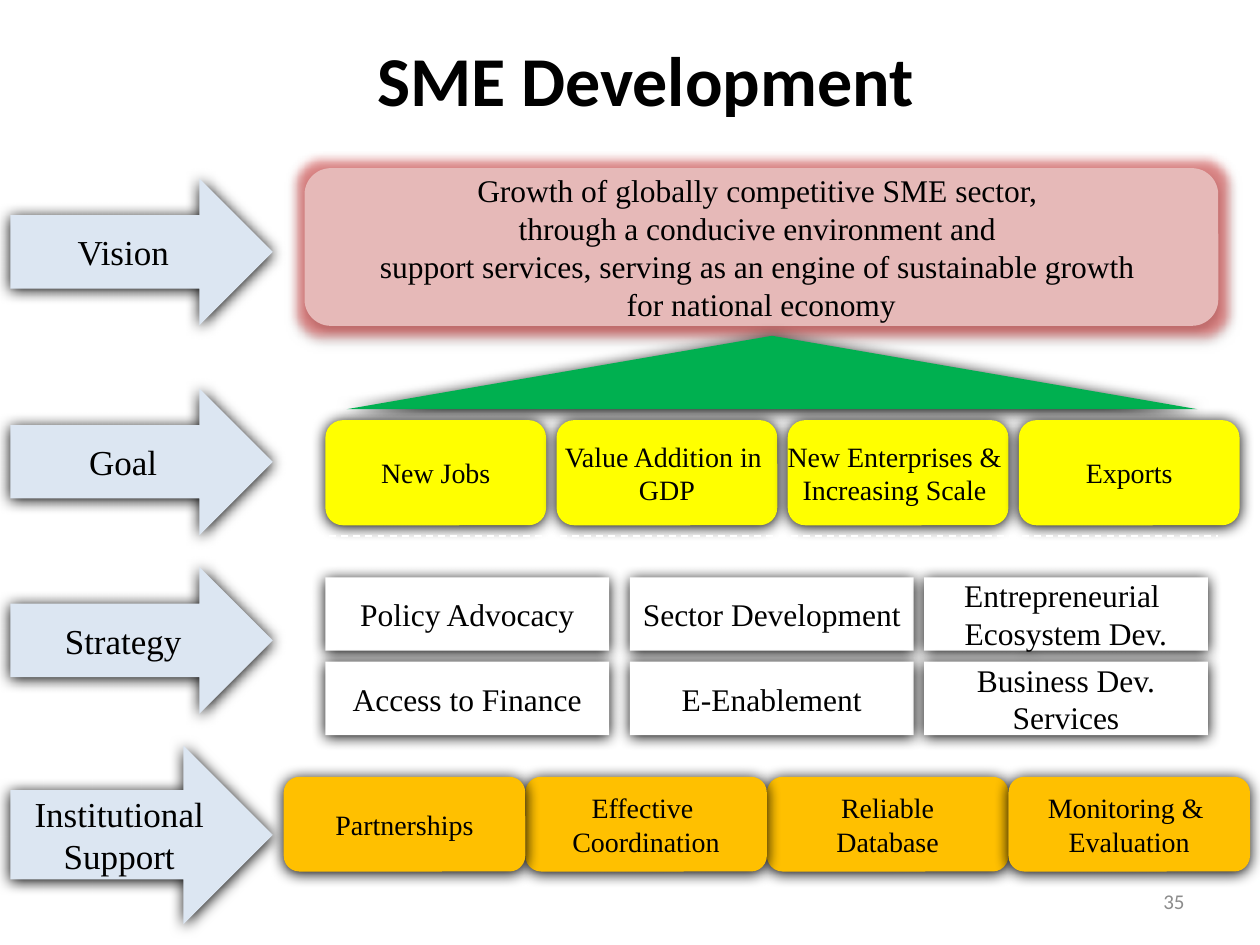
from lxml.etree import SubElement
from pptx import Presentation
from pptx.dml.color import RGBColor
from pptx.enum.dml import MSO_LINE_DASH_STYLE as Dash
from pptx.enum.shapes import MSO_CONNECTOR_TYPE as Connector, MSO_SHAPE as Shape
from pptx.enum.text import MSO_VERTICAL_ANCHOR as Anchor, PP_PARAGRAPH_ALIGNMENT as Align
from pptx.oxml.ns import qn
from pptx.util import Cm, Pt

# Content: lines of text in drawing order
TITLE = "SME Development"
PAGE_NUMBER = "35"
STAGES = [  # lines, top, height in cm
    (["Vision"], 3.6, 2.96),
    (["Goal"], 7.83, 2.96),
    (["Strategy"], 11.43, 2.96),
    (["Institutional", "Support"], 15.03, 3.6),
]
VISION = [
    "Growth of globally competitive SME sector, ",
    "through a conducive environment and ",
    "support services, serving as an engine of sustainable growth ",
    "for national economy",
]
GOALS = [
    ["New Jobs"],
    ["Value Addition in ", "GDP"],
    ["New Enterprises & ", "Increasing Scale "],
    ["Exports"],
]
STRATEGIES = [
    [["Policy Advocacy"], ["Sector Development"], ["Entrepreneurial ", "Ecosystem Dev."]],
    [["Access to Finance"], ["E-Enablement"], ["Business Dev.", "Services"]],
]
SUPPORTS = [  # column, lines; later boxes overlap earlier ones
    (2, ["Reliable", "Database"]),
    (3, ["Monitoring & ", "Evaluation"]),
    (1, ["Effective ", "Coordination"]),
    (0, ["Partnerships"]),
]
DIVIDERS = [  # x1, y1, x2, y2 in cm
    (6.14, 10.8, 24.56, 10.8),
    (6.35, 15.45, 24.77, 15.45),
    (6.27, 11.01, 6.27, 15.03),
    (24.77, 11.01, 24.77, 15.03),
]

THEME = {
    "title": {"name": "Calibri", "size": Pt(40), "bold": True, "color": "000000"},
    "number": {"name": "Calibri", "size": Pt(12), "color": "8C8C8C"},
    "stage": {"name": "Times New Roman", "size": Pt(20), "color": "000000"},
    "body": {"name": "Times New Roman", "size": Pt(18), "color": "000000"},
    "small": {"name": "Times New Roman", "size": Pt(16), "color": "000000"},
    "arrow": "DCE6F2", "vision": "E6B9B8", "roof": "00B050", "goal": "FFFF00",
    "strategy": "FFFFFF", "support": "FFC000", "divider": "FFFFFF", "glow": "D62E2E",
}
# Effects: colour, opacity in percent, then lengths in points
SHADOW = {"color": "000000", "opacity": 100, "blur": 8.5, "distance": 1}
VISION_SHADOW = {"color": "000000", "opacity": 32, "blur": 3.5, "distance": 2.2}
VISION_GLOW = {"color": THEME["glow"], "opacity": 50, "radius": 11}


def add_effect(effects, tag, look, **attributes):
    effect = SubElement(effects, qn(tag), {key: str(value) for key, value in attributes.items()})
    color = SubElement(effect, qn("a:srgbClr"), val=look["color"])
    SubElement(color, qn("a:alpha"), val=str(look["opacity"] * 1000))


def add_effects(shape, shadow, glow=None):
    shape.shadow.inherit = False
    effects = shape._element.spPr.find(qn("a:effectLst"))
    if glow:
        add_effect(effects, "a:glow", glow, rad=Pt(glow["radius"]))
    add_effect(effects, "a:outerShdw", shadow, blurRad=Pt(shadow["blur"]),
               dist=Pt(shadow["distance"]), dir=90 * 60000, algn="ctr", rotWithShape=0)


def write(shape, lines, style, align=Align.CENTER, wrap=False):
    frame = shape.text_frame
    frame.word_wrap = wrap
    frame.vertical_anchor = Anchor.MIDDLE
    for index, line in enumerate(lines):
        para = frame.paragraphs[0] if index == 0 else frame.add_paragraph()
        para.alignment = align
        span = para.add_run()
        span.text = line
        for key, value in THEME[style].items():
            if key == "color":
                span.font.color.rgb = RGBColor.from_string(value)
            else:
                setattr(span.font, key, value)


def add_box(page, kind, place, fill, lines=(), style="body", shadow=SHADOW, glow=None):
    box = page.shapes.add_shape(kind, *map(Cm, place))
    box.fill.solid()
    box.fill.fore_color.rgb = RGBColor.from_string(THEME[fill])
    box.line.fill.background()
    add_effects(box, shadow, glow)
    write(box, lines, style)


def add_label(page, place, text, style, align):
    label = page.shapes.add_textbox(*map(Cm, place))
    write(label, [text], style, align, wrap=True)


def add_divider(page, ends):
    line = page.shapes.add_connector(Connector.STRAIGHT, *map(Cm, ends))
    line.line.color.rgb = RGBColor.from_string(THEME["divider"])
    line.line.width = Pt(1)
    line.line.dash_style = Dash.DASH
    SubElement(line._element.spPr, qn("a:effectLst"))


def main():
    deck = Presentation()
    deck.slide_width, deck.slide_height = Cm(25.4), Cm(19.05)
    page = deck.slides.add_slide(deck.slide_layouts[6])

    # Title and page number
    add_label(page, (1.9, 0, 22.23, 3.18), TITLE, "title", Align.CENTER)
    add_label(page, (18.2, 17.66, 5.93, 1.01), PAGE_NUMBER, "number", Align.RIGHT)

    # Stage arrows
    for lines, top, height in STAGES:
        add_box(page, Shape.RIGHT_ARROW, (0.21, top, 5.29, height), "arrow", lines, "stage")

    # Vision and the roof below it
    add_box(page, Shape.ROUNDED_RECTANGLE, (6.14, 3.39, 18.42, 3.18), "vision", VISION,
            shadow=VISION_SHADOW, glow=VISION_GLOW)
    add_box(page, Shape.ISOSCELES_TRIANGLE, (6.99, 6.77, 17.15, 1.48), "roof")

    # Goals
    for column, lines in enumerate(GOALS):
        place = (6.56 + column * 4.66, 8.47, 4.45, 2.12)
        add_box(page, Shape.ROUNDED_RECTANGLE, place, "goal", lines, "small")

    # Strategies
    for row, boxes in enumerate(STRATEGIES):
        for left, lines in zip((6.56, 12.7, 18.63), boxes):
            place = (left, 11.64 + row * 1.7, 5.72, 1.48)
            add_box(page, Shape.RECTANGLE, place, "strategy", lines)

    # Dashed dividers
    for ends in DIVIDERS:
        add_divider(page, ends)

    # Institutional support
    for column, lines in SUPPORTS:
        place = (5.72 + column * 4.87, 15.66, 4.87, 1.91)
        add_box(page, Shape.ROUNDED_RECTANGLE, place, "support", lines, "small")

    deck.save("out.pptx")


if __name__ == "__main__":
    main()
